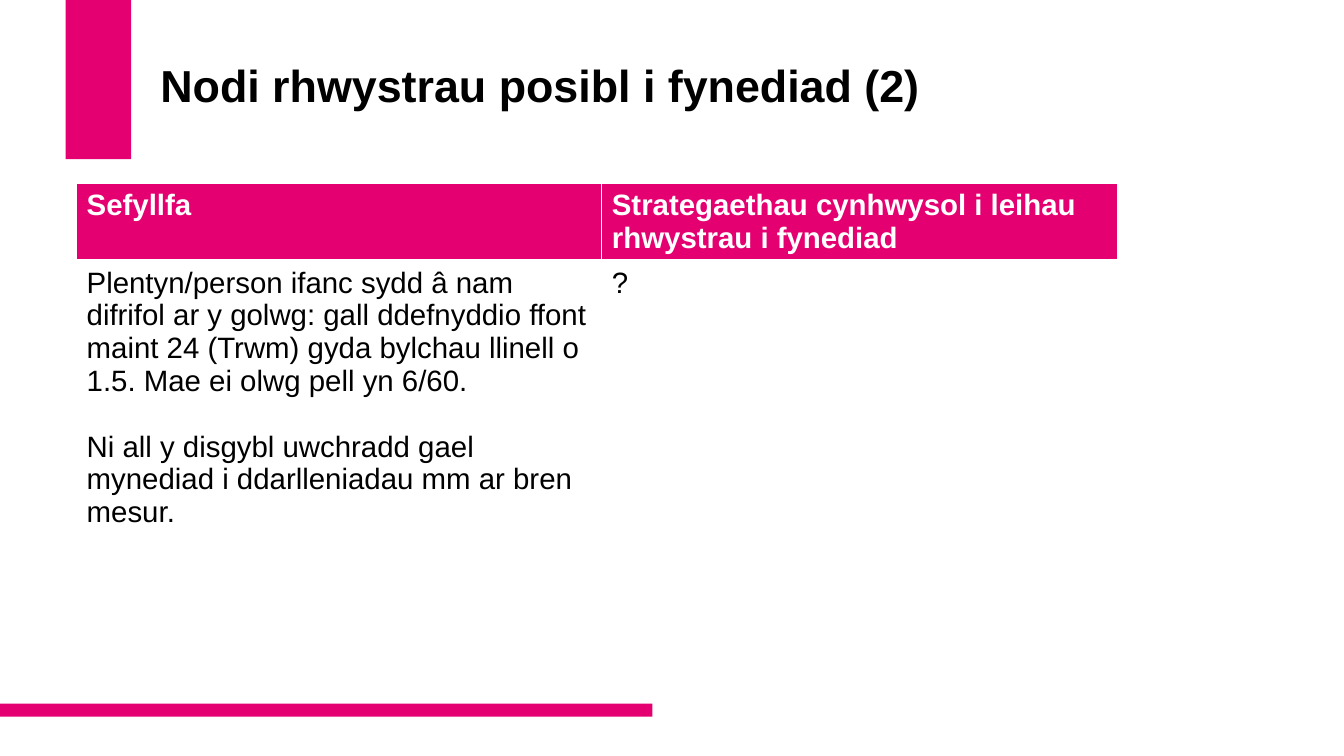
import pptx
import pptx.dml.color
import pptx.enum.shapes
import pptx.enum.text
import pptx.util
from dataclasses import dataclass
from lxml import etree
from pptx.oxml.ns import qn

Pt = pptx.util.Pt
Inches = pptx.util.Inches
RGB = pptx.dml.color.RGBColor.from_string
ANCHOR = pptx.enum.text.MSO_ANCHOR


@dataclass(frozen=True)
class Theme:
    pink: str = "E50071"
    white: str = "FFFFFF"
    black: str = "000000"
    font: str = "Arial"
    title: int = 32
    text: int = 21
    gap: float = 23.5


class Deck:
    """Places elements by percent of the slide's width and height."""

    def __init__(self, theme):
        self.theme = theme
        self.prs = pptx.Presentation()
        self.prs.slide_width = Inches(13.33)
        self.prs.slide_height = Inches(7.5)
        self.slide = self.prs.slides.add_slide(self.prs.slide_layouts[5])

    def wide(self, share):
        return round(self.prs.slide_width * share / 100)

    def high(self, share):
        return round(self.prs.slide_height * share / 100)

    def box(self, left, top, width, height):
        return self.wide(left), self.high(top), self.wide(width), self.high(height)

    def apply(self, item, values):
        for name, value in values.items():
            setattr(item, name, value)

    def style(self, para, size, color, bold):
        self.apply(para.font, dict(name=self.theme.font, size=Pt(size), bold=bold))
        para.font.color.rgb = RGB(color)

    def bar(self, *place):
        kind = pptx.enum.shapes.MSO_SHAPE.RECTANGLE
        bar = self.slide.shapes.add_shape(kind, *self.box(*place))
        bar.shadow.inherit = False
        bar.fill.solid()
        bar.fill.fore_color.rgb = RGB(self.theme.pink)
        bar.line.fill.background()

    def title(self, text, *place):
        title = self.slide.shapes.title
        self.apply(title, dict(zip(("left", "top", "width", "height"), self.box(*place))))
        frame = title.text_frame
        frame.text = text
        self.apply(frame, dict(
            auto_size=pptx.enum.text.MSO_AUTO_SIZE.NONE, word_wrap=True,
            vertical_anchor=ANCHOR.MIDDLE, margin_bottom=Inches(0.56)))
        para = frame.paragraphs[0]
        self.apply(para, dict(alignment=pptx.enum.text.PP_ALIGN.LEFT, line_spacing=0.9))
        self.style(para, self.theme.title, self.theme.black, True)

    def edge(self, cell, side, width):
        line = etree.Element(qn(f"a:ln{side}"), w=str(Pt(width)))
        fill = etree.SubElement(line, qn("a:solidFill"))
        etree.SubElement(fill, qn("a:srgbClr"), val=self.theme.white)
        return line

    def cell(self, cell, text, head):
        theme = self.theme
        cell.fill.solid()
        cell.fill.fore_color.rgb = RGB(theme.pink if head else theme.white)
        self.apply(cell, dict(
            margin_left=Inches(0.1), margin_right=Inches(0.1),
            margin_top=Inches(0.06), margin_bottom=Inches(0.06),
            vertical_anchor=ANCHOR.TOP))
        cell.text = text
        for i, para in enumerate(cell.text_frame.paragraphs):
            self.style(para, theme.text, theme.white if head else theme.black, head)
            if i:
                para.space_before = Pt(theme.gap)
        if head:
            props = cell._tc.get_or_add_tcPr()
            for i, side in enumerate("LRTB"):
                props.insert(i, self.edge(cell, side, 3 if side == "B" else 1))

    def table(self, left, top, cols, rows, texts):
        place = self.box(left, top, sum(cols), sum(rows))
        table = self.slide.shapes.add_table(len(rows), len(cols), *place).table
        table.horz_banding = False
        for col, share in zip(table.columns, cols):
            col.width = self.wide(share)
        for row, share in zip(table.rows, rows):
            row.height = self.high(share)
        for r, line in enumerate(texts):
            for c, text in enumerate(line):
                self.cell(table.cell(r, c), text, r == 0)


def main():
    deck = Deck(Theme())
    deck.bar(4.88, 0, 4.88, 21.07)
    deck.bar(0, 93.07, 48.54, 1.73)
    deck.title("Nodi rhwystrau posibl i fynediad (2)", 11.18, 5.33, 72.02, 19.33)
    deck.table(5.7, 24.2, (39.08, 38.41), (9.87, 36.27, 9.6), (
        ("Sefyllfa", "Strategaethau cynhwysol i leihau rhwystrau i fynediad"),
        ("Plentyn/person ifanc sydd â nam difrifol ar y golwg: gall ddefnyddio "
         "ffont maint 24 (Trwm) gyda bylchau llinell o 1.5. "
         "Mae ei olwg pell yn 6/60.\n"
         "Ni all y disgybl uwchradd gael mynediad i ddarlleniadau mm ar bren mesur.",
         "?"),
        ("", ""),
    ))
    deck.prs.save("out.pptx")


if __name__ == "__main__":
    main()
